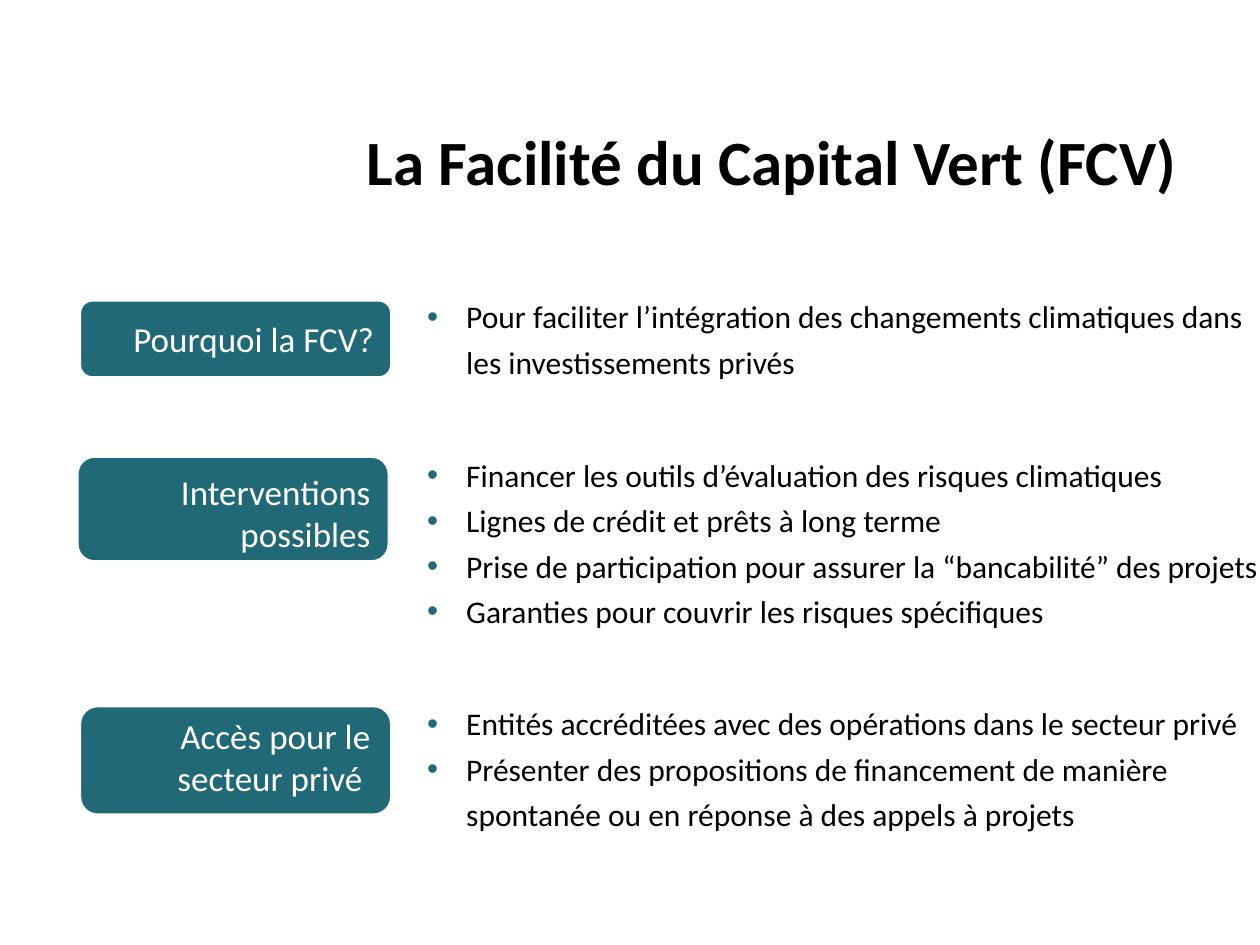
from dataclasses import dataclass

from lxml.etree import SubElement
from pptx import Presentation
from pptx.dml.color import RGBColor
from pptx.enum.shapes import MSO_SHAPE
from pptx.enum.text import MSO_ANCHOR, MSO_AUTO_SIZE, PP_ALIGN
from pptx.oxml.ns import qn
from pptx.util import Inches, Pt


@dataclass(frozen=True)
class Theme:
    font: str = "Calibri"
    accent: str = "216977"
    light: str = "FFFFFF"
    dark: str = "000000"
    title_size: int = 36
    label_size: int = 20
    list_size: int = 18


THEME = Theme()
COMPARISON_LAYOUT = 4
TITLE = "La Facilité du Capital Vert (FCV)"
TITLE_BOX = (0.6, 0.99, 8.84, 0.78)

# Each topic: label text, label shape box, label text box, line spacing,
# list placeholder index, list box, list items
TOPICS = [
    ("Pourquoi la FCV?", (0.63, 2.38, 2.48, 0.62), (0.58, 2.39, 2.44, 0.56), 1.1,
     1, (3.29, 2.25, 6.71, 0.83),
     ["Pour faciliter l’intégration des changements climatiques dans les investissements privés"]),
    ("Interventions possibles", (0.61, 3.62, 2.48, 0.84), (0.74, 3.55, 2.25, 1.03), 1.0,
     2, (3.29, 3.51, 6.94, 1.56),
     ["Financer les outils d’évaluation des risques climatiques",
      "Lignes de crédit et prêts à long terme",
      "Prise de participation pour assurer la “bancabilité” des projets",
      "Garanties pour couvrir les risques spécifiques"]),
    ("Accès pour le secteur privé ", (0.63, 5.6, 2.48, 0.87), (0.59, 5.55, 2.4, 0.91), 1.0,
     4, (3.29, 5.48, 6.67, 1.56),
     ["Entités accréditées avec des opérations dans le secteur privé",
      "Présenter des propositions de financement de manière spontanée "
      "ou en réponse à des appels à projets"]),
]


def to_inches(box):
    return [Inches(length) for length in box]


def place(shape, box):
    shape.left, shape.top, shape.width, shape.height = to_inches(box)


def add_bullet(paragraph):
    properties = paragraph._p.get_or_add_pPr()
    properties.set("marL", str(Inches(0.31)))
    properties.set("indent", str(-Inches(0.31)))
    color = SubElement(properties, qn("a:buClr"))
    SubElement(color, qn("a:srgbClr"), val=THEME.accent)
    SubElement(properties, qn("a:buFont"), typeface="Arial")
    SubElement(properties, qn("a:buChar"), char="•")


def write_text(shape, lines, *, size, color=THEME.dark, bold=False, align=PP_ALIGN.LEFT,
               anchor=MSO_ANCHOR.TOP, spacing=1.0, margins=(0.1, 0.05), bullets=False):
    frame = shape.text_frame
    frame.word_wrap = True
    frame.auto_size = MSO_AUTO_SIZE.NONE
    frame.vertical_anchor = anchor
    frame.margin_left = frame.margin_right = Inches(margins[0])
    frame.margin_top = frame.margin_bottom = Inches(margins[1])
    for index, line in enumerate(lines):
        paragraph = frame.add_paragraph() if index else frame.paragraphs[0]
        paragraph.alignment = align
        paragraph.line_spacing = spacing
        paragraph.space_before = Pt(0)
        if bullets:
            add_bullet(paragraph)
        run = paragraph.add_run()
        run.text = line
        run.font.name = THEME.font
        run.font.size = Pt(size)
        run.font.bold = bold
        run.font.color.rgb = RGBColor.from_string(color)


def add_title(slide, box):
    title = slide.shapes.title
    place(title, box)
    write_text(title, [TITLE], size=THEME.title_size, bold=True,
               align=PP_ALIGN.RIGHT, spacing=Pt(38.4))


def add_label(slide, text, shape_box, text_box, spacing):
    group = slide.shapes.add_group_shape()
    panel = group.shapes.add_shape(MSO_SHAPE.ROUNDED_RECTANGLE, *to_inches(shape_box))
    panel.shadow.inherit = False
    panel.fill.solid()
    panel.fill.fore_color.rgb = RGBColor.from_string(THEME.accent)
    panel.line.color.rgb = RGBColor.from_string(THEME.light)
    panel.line.width = Pt(2)
    caption = group.shapes.add_textbox(*to_inches(text_box))
    write_text(caption, [text], size=THEME.label_size, color=THEME.light,
               align=PP_ALIGN.RIGHT, anchor=MSO_ANCHOR.MIDDLE, spacing=spacing,
               margins=(0.05, 0.03))


def fill_list(placeholder, box, items):
    place(placeholder, box)
    write_text(placeholder, items, size=THEME.list_size, spacing=1.2, bullets=True)


def main():
    presentation = Presentation()
    presentation.slide_width, presentation.slide_height = Inches(10), Inches(7.5)
    slide = presentation.slides.add_slide(presentation.slide_layouts[COMPARISON_LAYOUT])
    placeholders = {shape.placeholder_format.idx: shape for shape in slide.placeholders}
    add_title(slide, TITLE_BOX)
    for label, shape_box, text_box, spacing, index, list_box, items in TOPICS:
        add_label(slide, label, shape_box, text_box, spacing)
        fill_list(placeholders.pop(index), list_box, items)
    for index, placeholder in placeholders.items():
        if index:  # index 0 is the title
            placeholder.element.getparent().remove(placeholder.element)
    presentation.save("out.pptx")


if __name__ == "__main__":
    main()
